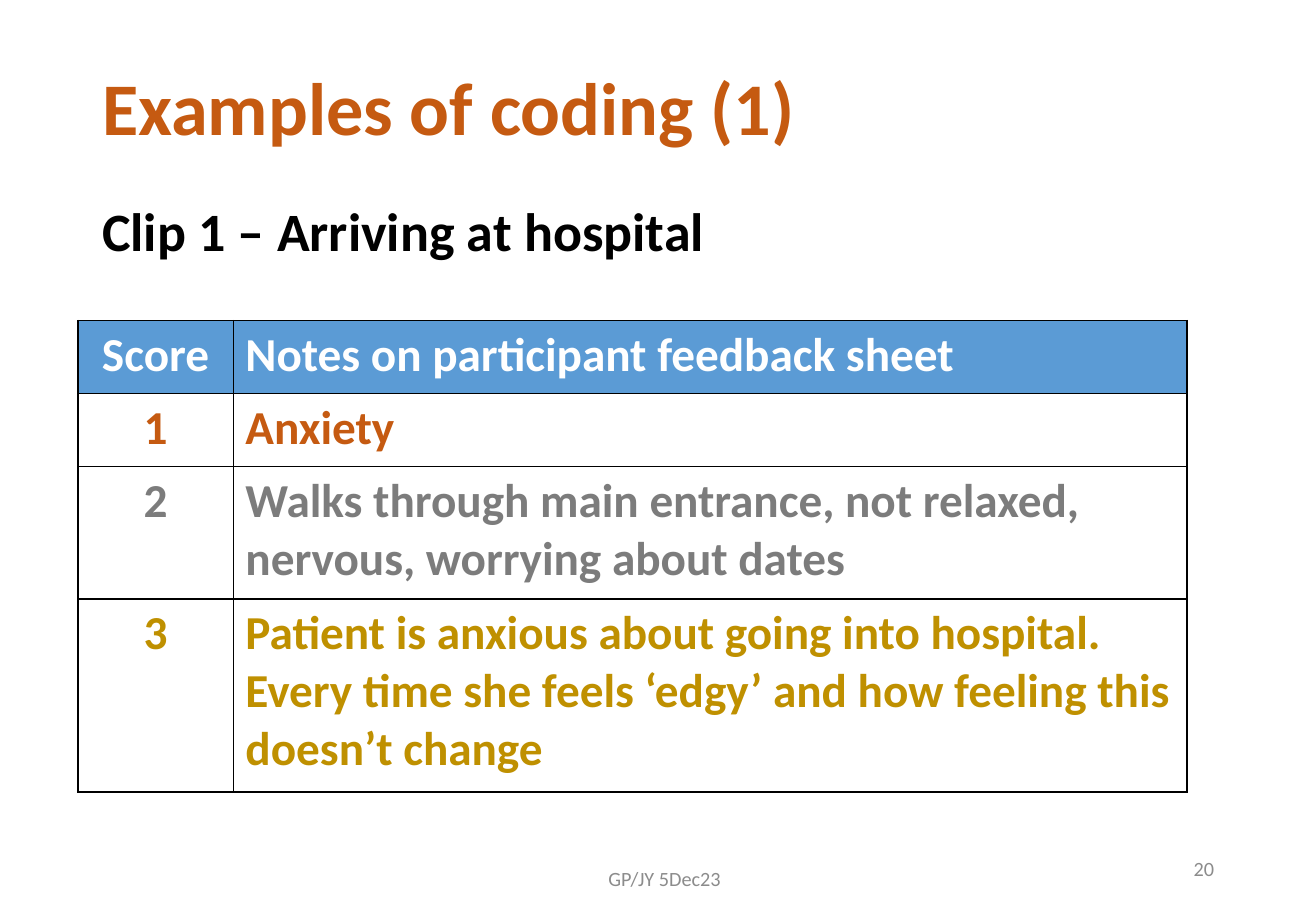
from dataclasses import dataclass

from lxml.etree import SubElement
from pptx import Presentation
from pptx.dml.color import RGBColor
from pptx.enum.text import MSO_ANCHOR as Anchor, PP_ALIGN as Align
from pptx.oxml.ns import qn
from pptx.util import Inches, Pt

FONT = "Calibri"
ORANGE = RGBColor(0xC5, 0x5A, 0x11)
BLACK = RGBColor(0, 0, 0)
WHITE = RGBColor(0xFF, 0xFF, 0xFF)
BLUE = RGBColor(0x5B, 0x9B, 0xD5)
GRAY = RGBColor(0x7C, 0x7C, 0x7C)
GOLD = RGBColor(0xBF, 0x90, 0x00)
FOOTER_GRAY = RGBColor(0x8C, 0x8C, 0x8C)


@dataclass
class ScoreRow:
    score: str
    notes: str
    color: RGBColor
    fill: RGBColor
    height: float


@dataclass
class Footer:
    text: str
    left: float
    top: float
    width: float
    align: Align


SCORE_ROWS = [
    ScoreRow("Score", "Notes on participant feedback sheet", WHITE, BLUE, 0.6),
    ScoreRow("1", "Anxiety", ORANGE, WHITE, 0.6),
    ScoreRow("2", "Walks through main entrance, not relaxed, nervous, worrying about dates",
             GRAY, WHITE, 1.09),
    ScoreRow("3", "Patient is anxious about going into hospital. Every time she feels "
             "‘edgy’ and how feeling this doesn’t change", GOLD, WHITE, 1.59),
]
COLUMN_WIDTHS = [1.28, 7.85]
FOOTERS = [
    Footer("20", 7.65, 6.95, 2.44, Align.RIGHT),
    Footer("GP/JY 5Dec23", 3.64, 7.03, 3.66, Align.CENTER),
]


def write(tf, text: str, *, size: float, color: RGBColor, bold: bool = False,
          align: Align = Align.LEFT, anchor: Anchor = Anchor.TOP,
          line_spacing: float = 1.0, space_before: float = 0) -> None:
    tf.word_wrap = True
    tf.vertical_anchor = anchor
    p = tf.paragraphs[0]
    p.alignment = align
    p.line_spacing = line_spacing
    p.space_before = Pt(space_before)
    r = p.add_run()
    r.text = text
    r.font.name = FONT
    r.font.size = Pt(size)
    r.font.bold = bold
    r.font.color.rgb = color


def place(sp, left: float, top: float, width: float, height: float) -> None:
    sp.left, sp.top = Inches(left), Inches(top)
    sp.width, sp.height = Inches(width), Inches(height)


def remove_bullet(p) -> None:
    pPr = p._p.get_or_add_pPr()
    pPr.set("marL", "0")
    pPr.set("indent", "0")
    SubElement(pPr, qn("a:buNone"))


def add_borders(cell) -> None:
    tcPr = cell._tc.get_or_add_tcPr()
    for side in ("lnL", "lnR", "lnT", "lnB"):
        ln = SubElement(tcPr, qn(f"a:{side}"), w=str(Pt(1)))
        fill = SubElement(ln, qn("a:solidFill"))
        SubElement(fill, qn("a:srgbClr"), val=str(BLACK))


def add_score_table(slide) -> None:
    height = sum(row.height for row in SCORE_ROWS)
    table = slide.shapes.add_table(
        len(SCORE_ROWS), len(COLUMN_WIDTHS), Inches(0.64), Inches(2.64),
        Inches(sum(COLUMN_WIDTHS)), Inches(height)).table
    for column, width in zip(table.columns, COLUMN_WIDTHS):
        column.width = Inches(width)
    for i, row in enumerate(SCORE_ROWS):
        table.rows[i].height = Inches(row.height)
        for j, (text, align) in enumerate([(row.score, Align.CENTER), (row.notes, Align.LEFT)]):
            cell = table.cell(i, j)
            add_borders(cell)
            cell.fill.solid()
            cell.fill.fore_color.rgb = row.fill
            write(cell.text_frame, text, size=28, color=row.color, bold=True, align=align)


def add_footer(slide, footer: Footer) -> None:
    sp = slide.shapes.add_textbox(Inches(footer.left), Inches(footer.top),
                                  Inches(footer.width), Inches(0.4))
    write(sp.text_frame, footer.text, size=12, color=FOOTER_GRAY,
          align=footer.align, anchor=Anchor.MIDDLE)


def main() -> None:
    prs = Presentation()
    prs.slide_width, prs.slide_height = Inches(10.83), Inches(7.5)
    slide = prs.slides.add_slide(prs.slide_layouts[1])

    title, body = slide.placeholders
    place(title, 0.74, 0.4, 9.34, 1.04)
    write(title.text_frame, "Examples of coding (1)", size=44, color=ORANGE, bold=True,
          anchor=Anchor.MIDDLE, line_spacing=0.9)
    place(body, 0.74, 1.64, 9.34, 0.81)
    write(body.text_frame, "Clip 1 – Arriving at hospital", size=32, color=BLACK, bold=True,
          line_spacing=0.9, space_before=10)
    remove_bullet(body.text_frame.paragraphs[0])

    add_score_table(slide)
    for footer in FOOTERS:
        add_footer(slide, footer)
    prs.save("out.pptx")


if __name__ == "__main__":
    main()
